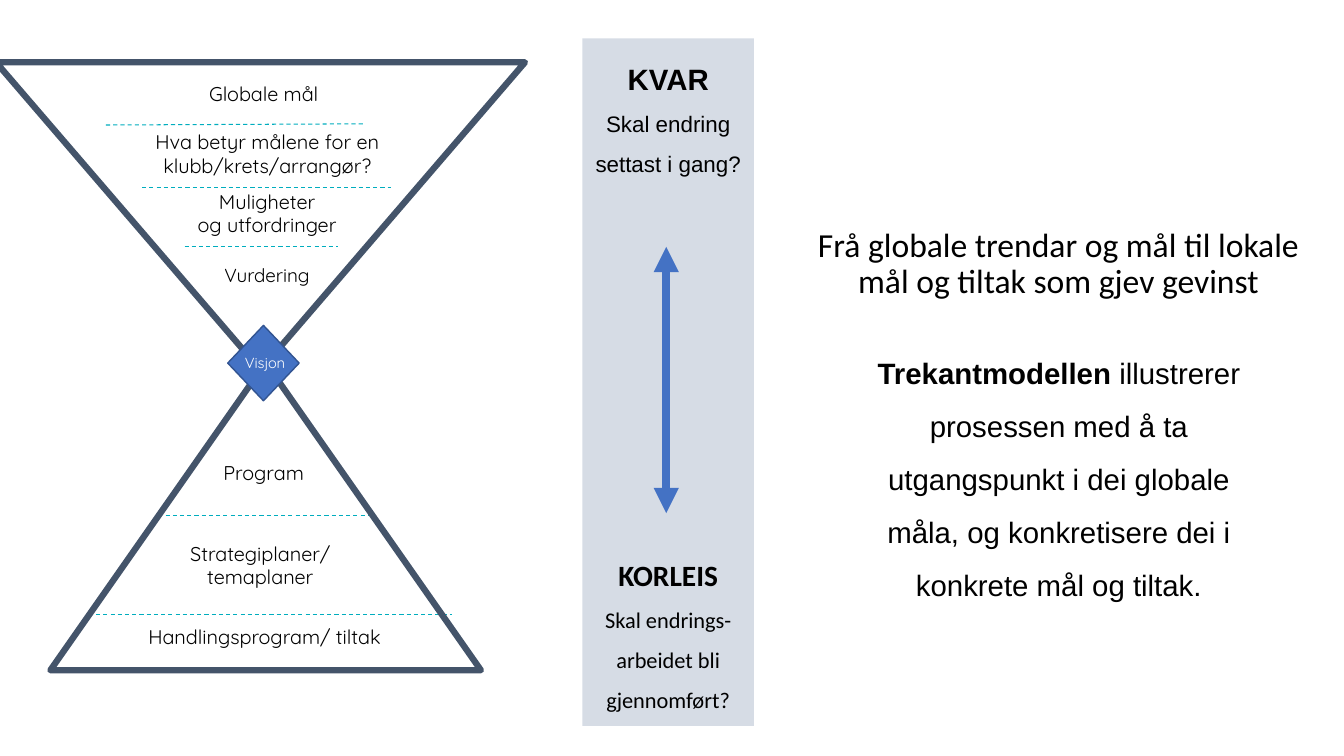
from lxml import etree
from pptx import Presentation
from pptx.dml.color import RGBColor
from pptx.enum import dml, shapes, text
from pptx.oxml import ns
from pptx.util import Cm, Pt

HUES = {"ink": "000000", "white": "FFFFFF", "teal": "00ADBE", "slate": "44546A",
        "blue": "4472C4", "edge": "325491", "pale": "D6DCE5"}
KIND = shapes.MSO_SHAPE
MID = text.PP_ALIGN.CENTER


def hue(name):
    """Return the named colour."""
    return RGBColor.from_string(HUES[name])


def add_run(para, words, size, font, bold=False, color="ink"):
    """Add one formatted run to a paragraph."""
    run = para.add_run()
    run.text = words
    run.font.size, run.font.name, run.font.bold = Pt(size), font, bold
    run.font.color.rgb = hue(color)


def add_para(frame, first, space=None):
    """Return a centred paragraph, reusing the first one of the frame."""
    para = frame.paragraphs[0] if first else frame.add_paragraph()
    para.alignment, para.line_spacing = MID, space
    return para


def add_form(slide, kind, area, fill=None, line=None, width=1):
    """Add a preset shape with the given fill and outline."""
    form = slide.shapes.add_shape(kind, *map(Cm, area))
    form.shadow.inherit = False
    if fill:
        form.fill.solid()
        form.fill.fore_color.rgb = hue(fill)
    else:
        form.fill.background()
    if line:
        form.line.color.rgb = hue(line)
        form.line.width = Pt(width)
    else:
        form.line.fill.background()
    return form


def add_line(slide, ends, color, width):
    """Add a straight line without a shadow."""
    line = slide.shapes.add_connector(shapes.MSO_CONNECTOR.STRAIGHT, *map(Cm, ends))
    line.line.color.rgb = hue(color)
    line.line.width = Pt(width)
    etree.SubElement(line.element.spPr, ns.qn("a:effectLst"))
    return line


def add_label(slide, area, lines, size=14.2, color="ink", wrap=True):
    """Add a centred label, one paragraph for each line."""
    frame = slide.shapes.add_textbox(*map(Cm, area)).text_frame
    frame.word_wrap = wrap
    frame.margin_left = frame.margin_right = Cm(0.33)
    frame.margin_top = frame.margin_bottom = Cm(0.15)
    for num, words in enumerate(lines):
        add_run(add_para(frame, num == 0), words, size, "Quicksand", color=color)


def draw_glass(slide, box):
    """Draw the two triangles with their levels and the vision diamond."""
    left, top, wide, high = box
    half = 7.75
    labels = [
        (4.88, 0.34, 3.73, 0.94, ["Globale mål"], 14.2, False),
        (2.44, 1.55, 8.79, 2.21, ["Hva betyr målene for en klubb/krets/arrangør?"], 14.2, True),
        (2.18, 3.05, 9.3, 2.31, ["Muligheter", "og utfordringer"], 14.2, True),
        (2.18, 4.93, 9.3, 0.91, ["Vurdering"], 13.5, True),
        (4.75, 9.89, 3.99, 0.94, ["Program"], 14.2, True),
        (4.49, 11.92, 4.34, 1.55, ["Strategiplaner/", "temaplaner"], 14.2, False),
        (3.4, 14.03, 6.73, 0.94, ["Handlingsprogram/ tiltak"], 14.2, False),
    ]
    for x, y, w, h, lines, size, wrap in labels:
        add_label(slide, (left + x, top + y, w, h), lines, size, wrap=wrap)
    levels = [(2.77, 1.58, 9.29, 1.55), (3.68, 3.15, 9.96, 3.15), (4.75, 4.65, 8.61, 4.65),
              (4.09, 11.43, 9.5, 11.43), (2.34, 13.92, 11.48, 13.92)]
    for x, y, end, low in levels:
        line = add_line(slide, (left + x, top + y, left + end, top + low), "teal", 0.75)
        line.line.dash_style = dml.MSO_LINE.DASH
    upper = add_form(slide, KIND.ISOSCELES_TRIANGLE, (left, top, wide, half),
                     line="slate", width=4.5)
    upper.rotation = 180
    add_form(slide, KIND.ISOSCELES_TRIANGLE, (left + 1.37, top + high - half, 10.85, half),
             line="slate", width=4.5)
    add_form(slide, KIND.DIAMOND, (left + 5.84, top + 6.63, 1.8, 1.9), "blue", "edge")
    add_label(slide, (left + 5.89, top + 7.19, 1.78, 0.79), ["Visjon"], 10.5, "white")


def draw_panel(slide, box):
    """Draw the panel of questions with its double arrow."""
    left, top = box[:2]
    frame = add_form(slide, KIND.RECTANGLE, box, "pale").text_frame
    frame.word_wrap = True
    frame.vertical_anchor = text.MSO_ANCHOR.TOP
    parts = [("KVAR", 21, "Arial", True, 0),
             ("Skal endring settast i gang?", 16, "Arial", False, 0),
             ("KORLEIS", 21, "Calibri", True, 259),
             ("Skal endrings-arbeidet bli gjennomført?", 16, "Calibri", False, 0)]
    for num, (words, size, font, bold, gap) in enumerate(parts):
        para = add_para(frame, num == 0, 1.5)
        para.space_before = Pt(gap)
        add_run(para, words, size, font, bold)
    mid = left + 2.11
    arrow = add_line(slide, (mid, top + 5.25, mid, top + 11.96), "blue", 6)
    stroke = arrow.element.spPr.find(ns.qn("a:ln"))
    for end in ("a:headEnd", "a:tailEnd"):
        etree.SubElement(stroke, ns.qn(end), type="triangle")


def draw_story(slide, box):
    """Place the title and the explanation below it."""
    left, top, wide, high = box
    title = slide.shapes.title
    title.left, title.top, title.width, title.height = map(Cm, (left, top, wide, 4.09))
    title.text_frame.vertical_anchor = text.MSO_ANCHOR.MIDDLE
    title.text_frame.word_wrap = True
    add_run(add_para(title.text_frame, True, 0.9),
            "Frå globale trendar og mål til lokale mål og tiltak som gjev gevinst",
            24, "Calibri")
    area = (left + 1.6, top + 3.76, 9.93, high - 3.76)
    frame = slide.shapes.add_textbox(*map(Cm, area)).text_frame
    frame.word_wrap = True
    para = add_para(frame, True, 1.5)
    add_run(para, "Trekantmodellen", 21, "Arial", True)
    add_run(para, " illustrerer prosessen med å ta utgangspunkt i dei globale måla, "
            "og konkretisere dei i konkrete mål og tiltak.", 21, "Arial")


def main():
    """Build and save the slide."""
    deck = Presentation()
    deck.slide_width, deck.slide_height = Cm(33.87), Cm(19.05)
    slide = deck.slides.add_slide(deck.slide_layouts[5])
    draw_glass(slide, (-0.1, 1.57, 13.33, 15.32))
    draw_panel(slide, (14.68, 0.97, 4.32, 17.32))
    draw_story(slide, (20.12, 4.62, 13.11, 10.75))
    deck.save("out.pptx")


if __name__ == "__main__":
    main()
